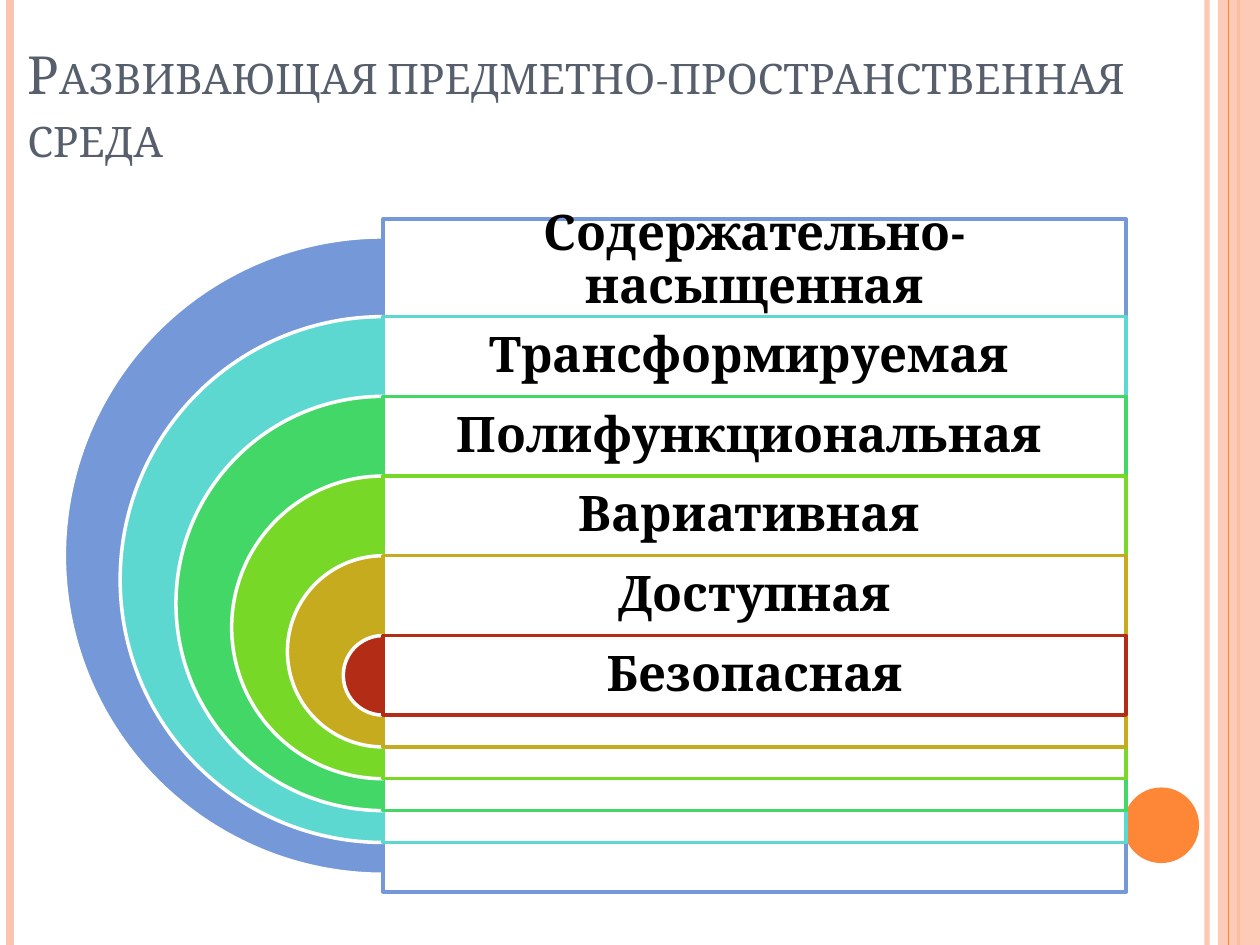
from dataclasses import dataclass

from lxml import etree
from pptx import Presentation
from pptx.dml import color
from pptx.enum import shapes, text
from pptx.oxml import ns
from pptx.util import Pt

COLORS = {
    "peach": "FEC3AE", "orange": "FE8637", "slate": "575F6D",
    "white": "FFFFFF", "black": "000000", "blue": "7598D9",
    "aqua": "5CD8D1", "green": "42D766", "lime": "77D827",
    "gold": "C6AB1E", "red": "B32C16",
}
PAGE_WIDTH, PAGE_HEIGHT = 720, 540
ARC_TOP, ARC_SIZE = 135.4, 364.2
ROW_STEP, SIZE_STEP = 45.55, 63.74
CENTER_X, PANEL_WIDTH = 218.9, 424.6
OUTER_MARGIN = 10.1
LABEL_INSET = Pt(8.4)
TITLE_FRAME = {"word_wrap": True, "vertical_anchor": text.MSO_ANCHOR.BOTTOM}
LABEL_FRAME = {
    "word_wrap": True, "vertical_anchor": text.MSO_ANCHOR.MIDDLE,
    "margin_left": LABEL_INSET, "margin_right": LABEL_INSET,
    "margin_top": LABEL_INSET, "margin_bottom": LABEL_INSET,
}
TITLE_PARAGRAPH = {"alignment": text.PP_ALIGN.LEFT}
LABEL_PARAGRAPH = {"alignment": text.PP_ALIGN.CENTER, "line_spacing": 0.9}
TITLE_FONT = {"name": "Cambria", "size": Pt(30)}
LABEL_FONT = {"name": "Cambria", "size": Pt(28), "bold": True}


@dataclass(frozen=True)
class Box:
    left: float
    top: float
    width: float
    height: float

    def lengths(self):
        """Return the four lengths in slide units."""
        return [Pt(v) for v in (self.left, self.top, self.width, self.height)]


@dataclass(frozen=True)
class Stripe:
    x: float
    color: str
    weight: float
    opacity: int = 100


@dataclass(frozen=True)
class Quality:
    label: str
    color: str


STRIPES_BELOW = [
    Stripe(689.8, "peach", 3, 93),
    Stripe(5.8, "peach", 4.5),
    Stripe(707.8, "orange", 1.5),
]
STRIPE_ABOVE = Stripe(702, "orange", 0.75)
QUALITIES = [
    Quality("Содержательно-насыщенная", "blue"),
    Quality("Трансформируемая ", "aqua"),
    Quality("Полифункциональная ", "green"),
    Quality("Вариативная ", "lime"),
    Quality("Доступная", "gold"),
    Quality("Безопасная", "red"),
]


def rgb(name: str) -> color.RGBColor:
    """Look up a named colour."""
    return color.RGBColor.from_string(COLORS[name])


def apply(target, values: dict) -> None:
    """Set each attribute in values on target."""
    for attribute, value in values.items():
        setattr(target, attribute, value)


def set_opacity(element, percent: int) -> None:
    """Make the first solid colour of an element translucent."""
    if percent < 100:
        tint = next(element.iter(ns.qn("a:srgbClr")))
        etree.SubElement(tint, ns.qn("a:alpha"), val=str(percent * 1000))


def add_stripe(slide, stripe: Stripe) -> None:
    """Draw a vertical line over the full page height."""
    line = slide.shapes.add_connector(
        shapes.MSO_CONNECTOR.STRAIGHT,
        Pt(stripe.x), 0, Pt(stripe.x), Pt(PAGE_HEIGHT))
    line.line.color.rgb = rgb(stripe.color)
    line.line.width = Pt(stripe.weight)
    properties = line._element.spPr
    set_opacity(properties, stripe.opacity)
    etree.SubElement(properties, ns.qn("a:effectLst"))


def add_figure(slide, preset, box: Box, fill: str, outline: str = "", opacity: int = 100):
    """Draw a filled preset shape, outlined if an outline colour is given."""
    figure = slide.shapes.add_shape(preset, *box.lengths())
    figure.shadow.inherit = False
    figure.fill.solid()
    figure.fill.fore_color.rgb = rgb(fill)
    set_opacity(figure._element.spPr, opacity)
    if outline:
        figure.line.color.rgb = rgb(outline)
        figure.line.width = Pt(2)
    else:
        figure.line.fill.background()
    return figure


def add_words(slide, box: Box, words: str, ink: str, frame: dict, paragraph: dict, font: dict):
    """Add a one-paragraph text box and return its run."""
    body = slide.shapes.add_textbox(*box.lengths()).text_frame
    apply(body, frame)
    apply(body.paragraphs[0], paragraph)
    run = body.paragraphs[0].add_run()
    run.text = words
    apply(run.font, font)
    run.font.color.rgb = rgb(ink)
    return run


def add_quality(slide, index: int, quality: Quality) -> None:
    """Draw one nested half disc with its panel and label."""
    size = ARC_SIZE - index * SIZE_STEP
    top = ARC_TOP + index * ROW_STEP
    margin = 0 if index else OUTER_MARGIN
    label_height = ROW_STEP if index else 48.2
    half_disc = add_figure(
        slide, shapes.MSO_SHAPE.PIE,
        Box(CENTER_X - size / 2, top, size, size), quality.color, "white")
    half_disc.adjustments[0] = 54
    half_disc.adjustments[1] = 162
    add_figure(
        slide, shapes.MSO_SHAPE.RECTANGLE,
        Box(CENTER_X, top - margin, PANEL_WIDTH, size + 2 * margin),
        "white", quality.color, 90)
    add_words(
        slide, Box(CENTER_X, top - margin, PANEL_WIDTH, label_height),
        quality.label, "black", LABEL_FRAME, LABEL_PARAGRAPH, LABEL_FONT)


def main() -> None:
    """Build the slide and save it."""
    deck = Presentation()
    deck.slide_width, deck.slide_height = Pt(PAGE_WIDTH), Pt(PAGE_HEIGHT)
    slide = deck.slides.add_slide(deck.slide_layouts[6])
    for stripe in STRIPES_BELOW:
        add_stripe(slide, stripe)
    add_figure(slide, shapes.MSO_SHAPE.RECTANGLE,
               Box(696, 0, 24, PAGE_HEIGHT), "peach", opacity=87)
    add_stripe(slide, STRIPE_ABOVE)
    add_figure(slide, shapes.MSO_SHAPE.OVAL, Box(642, 450, 43.2, 43.2), "orange")
    title = add_words(
        slide, Box(8.6, 9.4, 692.6, 90),
        "Развивающая предметно-пространственная среда", "slate",
        TITLE_FRAME, TITLE_PARAGRAPH, TITLE_FONT)
    title._r.get_or_add_rPr().set("cap", "small")
    for index, quality in enumerate(QUALITIES):
        add_quality(slide, index, quality)
    deck.save("out.pptx")


if __name__ == "__main__":
    main()
